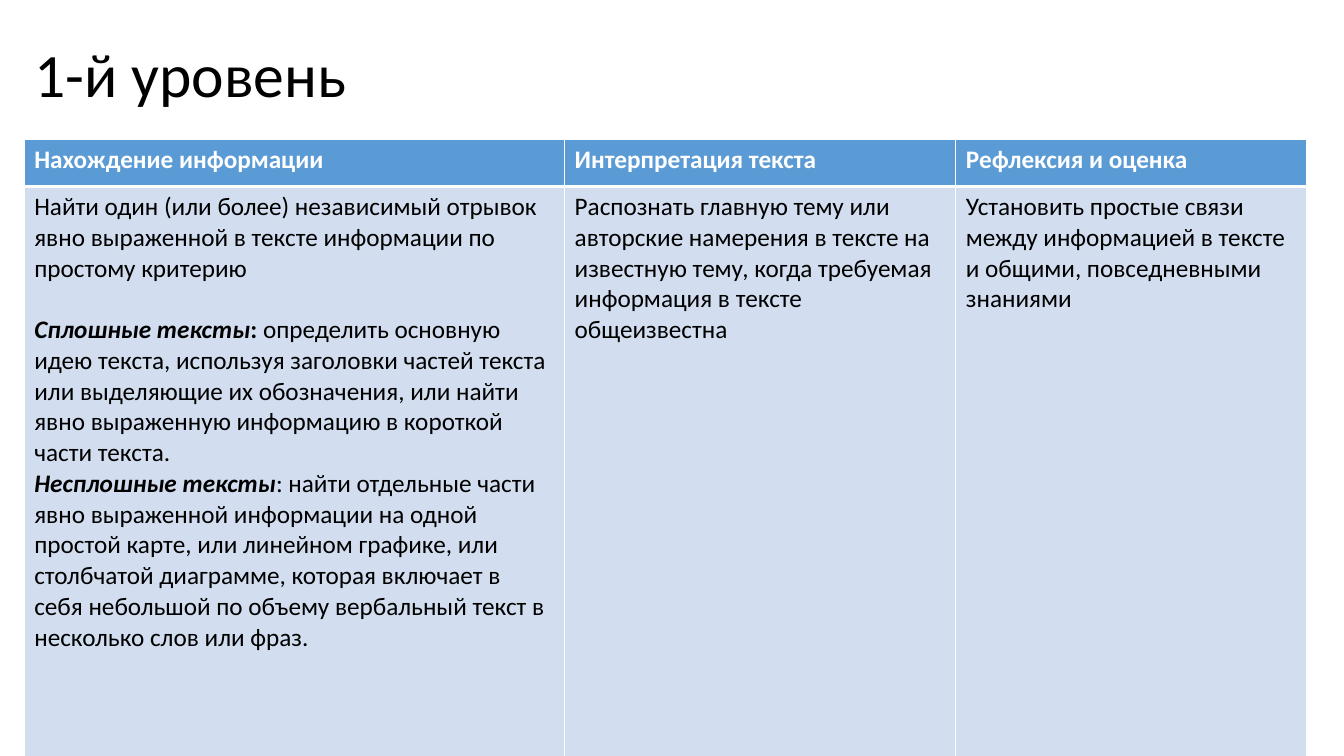
from lxml import etree
from pptx import Presentation
from pptx.dml.color import RGBColor
from pptx.enum.text import MSO_ANCHOR, PP_ALIGN
from pptx.oxml.ns import qn
from pptx.util import Inches, Pt

LEFT, MIDDLE, TOP = PP_ALIGN.LEFT, MSO_ANCHOR.MIDDLE, MSO_ANCHOR.TOP

FONT = "Calibri"
HEX = {"head": "5B9BD5", "body": "D2DEEF", "white": "FFFFFF", "black": "000000"}
TITLE = "1-й уровень"
HEADS = ["Нахождение информации", "Интерпретация текста", "Рефлексия и оценка"]
TASKS = [
    [
        [("Найти один (или более) независимый отрывок явно выраженной в тексте "
          "информации по простому критерию", "")],
        [("Сплошные тексты", "bi"), (": ", "b"),
         ("определить основную идею текста, используя заголовки частей текста или "
          "выделяющие их обозначения, или найти явно выраженную информацию в "
          "короткой части текста.", "")],
        [("Несплошные тексты", "bi"),
         (": найти отдельные части явно выраженной информации на одной простой "
          "карте, или линейном графике, или столбчатой диаграмме, которая включает "
          "в себя небольшой по объему вербальный текст в несколько слов или фраз.", "")],
    ],
    [[("Распознать главную тему или авторские намерения в тексте на известную тему, "
       "когда требуемая информация в тексте общеизвестна", "")]],
    [[("Установить простые связи между информацией в тексте и общими, "
       "повседневными знаниями", "")]],
]
WIDTHS = [5.36, 3.88, 3.48]
HEIGHTS = [0.47, 7.06]
X, WIDE = 0.24, 12.72
GAP = 22
ROWS = [
    ([[[(head, "b")]] for head in HEADS], "head", "white", {"lnB": 3}),
    (TASKS, "body", "black", {"lnT": 3}),
]


def add_run(para, text, size, color, style=""):
    run = para.add_run()
    run.text = text
    font = run.font
    font.name, font.size = FONT, Pt(size)
    font.bold, font.italic = "b" in style, "i" in style
    font.color.rgb = RGBColor.from_string(HEX[color])


def add_edges(cell, heavy):
    props = cell._tc.get_or_add_tcPr()
    for side in ("lnL", "lnR", "lnT", "lnB"):
        line = etree.SubElement(props, qn("a:" + side), w=str(Pt(heavy.get(side, 1))))
        fill = etree.SubElement(line, qn("a:solidFill"))
        etree.SubElement(fill, qn("a:srgbClr"), val=HEX["white"])


def fill_cell(cell, paras, back, color, heavy):
    add_edges(cell, heavy)
    cell.fill.solid()
    cell.fill.fore_color.rgb = RGBColor.from_string(HEX[back])
    cell.vertical_anchor = TOP
    frame = cell.text_frame
    for i, runs in enumerate(paras):
        para = frame.add_paragraph() if i else frame.paragraphs[0]
        para.alignment = LEFT
        if i == 1:
            para.space_before = Pt(GAP)
        for text, style in runs:
            add_run(para, text, 18, color, style)


def main():
    deck = Presentation()
    deck.slide_width, deck.slide_height = Inches(13.33), Inches(7.5)
    slide = deck.slides.add_slide(deck.slide_layouts[5])

    title = slide.shapes.title
    title.left, title.top = Inches(X), Inches(0.16)
    title.width, title.height = Inches(WIDE), Inches(1.21)
    title.text_frame.vertical_anchor = MIDDLE
    para = title.text_frame.paragraphs[0]
    para.alignment, para.line_spacing = LEFT, 0.9
    add_run(para, TITLE, 44, "black")

    table = slide.shapes.add_table(
        len(ROWS), len(WIDTHS), Inches(X), Inches(1.38),
        Inches(WIDE), Inches(sum(HEIGHTS))).table
    for col, width in zip(table.columns, WIDTHS):
        col.width = Inches(width)
    for r, (cells, back, color, heavy) in enumerate(ROWS):
        table.rows[r].height = Inches(HEIGHTS[r])
        for c, paras in enumerate(cells):
            fill_cell(table.cell(r, c), paras, back, color, heavy)

    deck.save("out.pptx")


if __name__ == "__main__":
    main()
